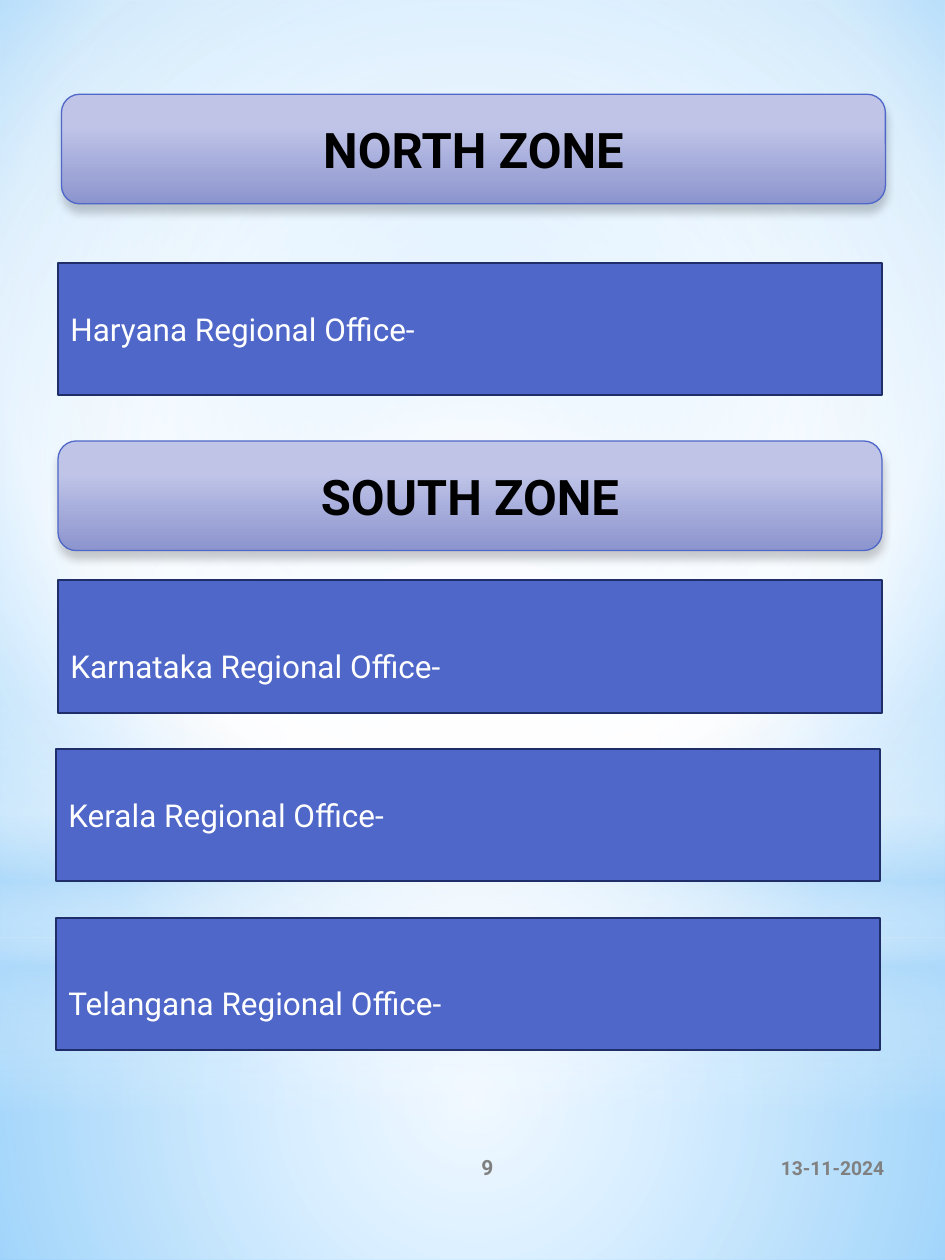
from lxml.etree import SubElement
from pptx import Presentation
from pptx.dml.color import RGBColor
from pptx.enum.shapes import MSO_SHAPE as Shape
from pptx.enum.text import MSO_ANCHOR as Anchor, PP_ALIGN as Align
from pptx.oxml.ns import qn
from pptx.util import Cm, Pt

FONT = "Roboto"
SLIDE_WIDTH, SLIDE_HEIGHT = 19.05, 25.4
BAR_WIDTH = 16.61
BLUE, NAVY, GRAY = "4E67C8", "1F2E69", "808080"
CENTER = (50, 50, 50, 50)


def color(value):
    return RGBColor.from_string(value)


def set_gradient(parent, stops, focus=None):
    """Swap the solid fill for (position, colour, opacity) stops: circular with a focus, else downward."""
    gradient = parent.makeelement(qn("a:gradFill"), {"rotWithShape": "1"})
    stop_list = SubElement(gradient, qn("a:gsLst"))
    for position, value, opacity in stops:
        stop = SubElement(stop_list, qn("a:gs"), pos=str(position * 1000))
        stop_color = SubElement(stop, qn("a:srgbClr"), val=value)
        if opacity < 100:
            SubElement(stop_color, qn("a:alpha"), val=str(opacity * 1000))
    if focus:
        circle = SubElement(gradient, qn("a:path"), path="circle")
        sides = {side: str(percent * 1000) for side, percent in zip("ltrb", focus)}
        SubElement(circle, qn("a:fillToRect"), sides)
    else:
        SubElement(gradient, qn("a:lin"), ang="5400000", scaled="0")
    parent.replace(parent.find(qn("a:solidFill")), gradient)


def add_box(slide, kind, box, fill=BLUE, line=None, width=0):
    shape = slide.shapes.add_shape(kind, *map(Cm, box))
    shape.shadow.inherit = False
    shape.fill.solid()
    shape.fill.fore_color.rgb = color(fill)
    if line:
        shape.line.color.rgb = color(line)
        shape.line.width = Pt(width)
    else:
        shape.line.fill.background()
    return shape


def write_text(shape, text, size, value, bold=False, align=Align.LEFT):
    frame = shape.text_frame
    frame.word_wrap = True
    frame.vertical_anchor = Anchor.MIDDLE
    paragraph = frame.paragraphs[0]
    paragraph.alignment = align
    run = paragraph.add_run()
    run.text = text
    run.font.name = FONT
    run.font.size = Pt(size)
    run.font.bold = bold
    run.font.color.rgb = color(value)


def add_backdrop(slide):
    slide.background.fill.solid()
    set_gradient(slide.element.find(".//" + qn("p:bgPr")),
                 [(0, "9ED5FF", 100), (60, "FFFFFF", 100), (100, "5BB9FF", 100)],
                 (20, 10, 20, 60))
    layers = [
        (Shape.RECTANGLE, 18.9, 6.5, CENTER,
         [(0, "FFFFFF", 91), (37, "FFFFFF", 76), (100, "B4DCFA", 79)]),
        (Shape.RECTANGLE, 0, 18.9, CENTER,
         [(0, "FFFFFF", 89), (48, "FFFFFF", 62), (100, "B4DCFA", 79)]),
        (Shape.RECTANGLE, 13.94, 8.46, None,
         [(0, "FFFFFF", 0), (29, "FFFFFF", 30), (45, "B4DCFA", 40),
          (55, "FFFFFF", 26), (65, "B4DCFA", 60), (100, "FFFFFF", 0)]),
        (Shape.OVAL, 5.92, 18.9, CENTER, [(0, "FFFFFF", 100), (56, "FFFFFF", 0)]),
    ]
    for kind, top, height, focus, stops in layers:
        layer = add_box(slide, kind, (0, top, SLIDE_WIDTH, height))
        set_gradient(layer.element.spPr, stops, focus)


def add_zone_title(slide, left, top, text):
    shape = add_box(slide, Shape.ROUNDED_RECTANGLE, (left, top, BAR_WIDTH, 2.21),
                    line=BLUE, width=0.75)
    properties = shape.element.spPr
    set_gradient(properties, [(28, "C0C5E8", 100), (100, "8C94CE", 100)])
    shadow = SubElement(properties.find(qn("a:effectLst")), qn("a:outerShdw"),
                        blurRad=str(Pt(5)), dist=str(Pt(4)), dir="5400000",
                        rotWithShape="0")
    shadow_color = SubElement(shadow, qn("a:srgbClr"), val="000000")
    SubElement(shadow_color, qn("a:alpha"), val="20000")
    write_text(shape, text, 28, "000000", bold=True, align=Align.CENTER)


def add_office(slide, left, top, state, lowered=False):
    shape = add_box(slide, Shape.RECTANGLE, (left, top, BAR_WIDTH, 2.67),
                    line=NAVY, width=1.25)
    write_text(shape, f"{state} Regional Office-", 18, "FFFFFF")
    if lowered:
        shape.text_frame.margin_top = Cm(0.9)


def add_footer(slide, left, width, text, size, align):
    box = slide.shapes.add_textbox(Cm(left), Cm(22.86), Cm(width), Cm(1.35))
    write_text(box, text, size, GRAY, bold=True, align=align)


def main():
    presentation = Presentation()
    presentation.slide_width = Cm(SLIDE_WIDTH)
    presentation.slide_height = Cm(SLIDE_HEIGHT)
    slide = presentation.slides.add_slide(presentation.slide_layouts[6])
    add_backdrop(slide)
    add_footer(slide, 12.85, 5.23, "13-11-2024", 11, Align.RIGHT)
    add_footer(slide, 7.92, 3.81, "9", 12, Align.CENTER)
    add_zone_title(slide, 1.24, 1.9, "NORTH ZONE")
    add_office(slide, 1.17, 5.3, "Haryana")
    add_zone_title(slide, 1.17, 8.89, "SOUTH ZONE")
    add_office(slide, 1.17, 11.7, "Karnataka", lowered=True)
    add_office(slide, 1.13, 15.1, "Kerala")
    add_office(slide, 1.13, 18.5, "Telangana", lowered=True)
    presentation.save("out.pptx")


if __name__ == "__main__":
    main()
